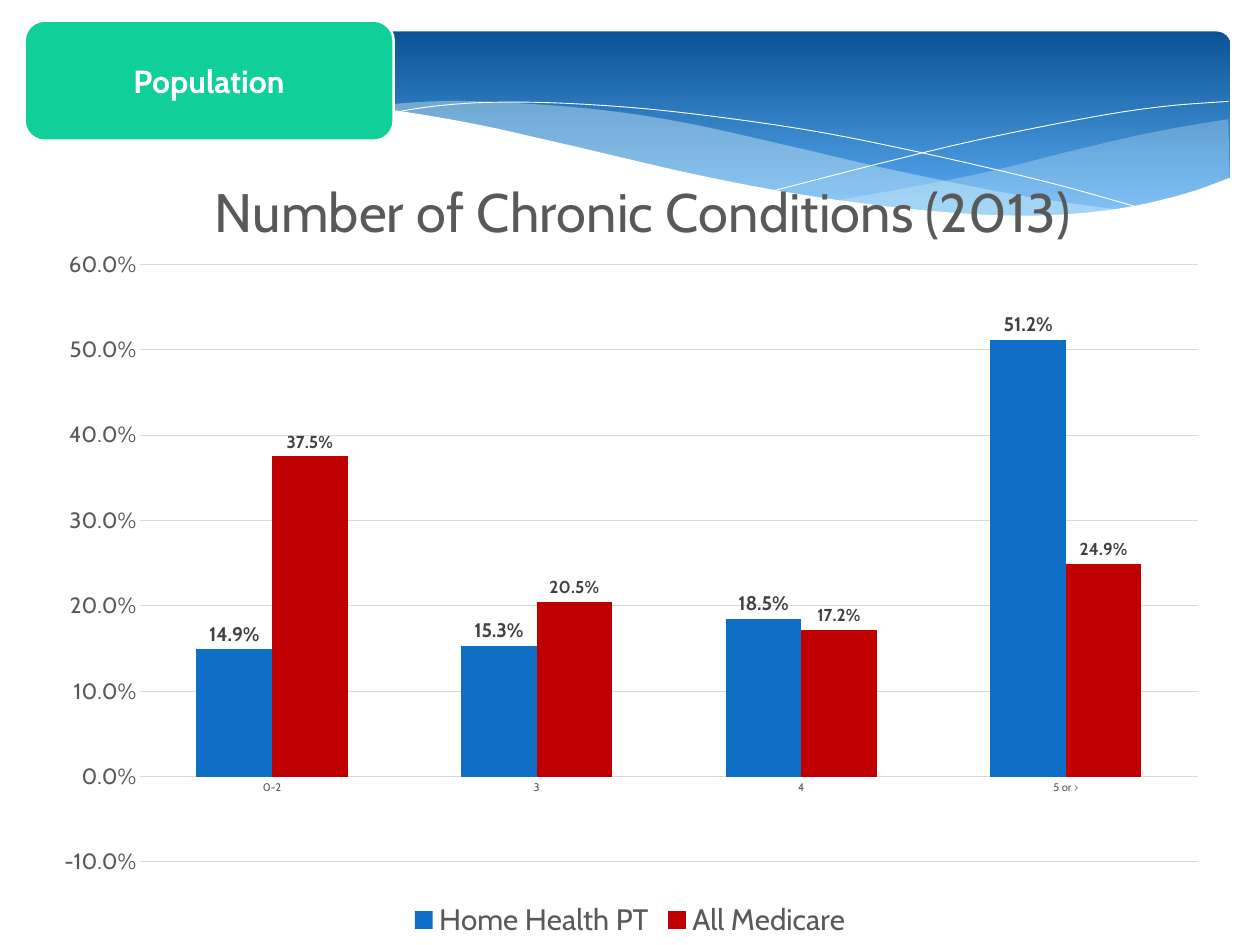
import pptx
import pptx.chart.data
import pptx.dml.color
import pptx.enum.chart
import pptx.enum.shapes
import pptx.enum.text
import pptx.oxml
import pptx.oxml.ns
import pptx.util

COLUMNS, ROWS = 128, 96


def rgb(hex_colour):
    return pptx.dml.color.RGBColor.from_string(hex_colour)


def smooth(knots, steps=5):
    padded = [knots[0], *knots, knots[-1]]
    points = [knots[0]]
    for a, b, c, d in zip(padded, padded[1:], padded[2:], padded[3:]):
        for step in range(1, steps + 1):
            t = step / steps
            points.append(tuple(
                (2 * q + (r - p) * t + (2 * p - 5 * q + 4 * r - s) * t ** 2
                 + (3 * q - p - 3 * r + s) * t ** 3) / 2
                for p, q, r, s in zip(a, b, c, d)))
    return points


class SlideBuilder:
    font = "Cabin"
    ink = "595959"
    rule = "D9D9D9"

    def __init__(self, deck):
        self.slide = deck.slides.add_slide(deck.slide_layouts[6])
        self.column = deck.slide_width / COLUMNS
        self.row = deck.slide_height / ROWS

    def box(self, left, top, width, height):
        return (round(left * self.column), round(top * self.row),
                round(width * self.column), round(height * self.row))

    def style(self, font, size, colour, bold=False):
        font.name, font.size, font.bold = self.font, pptx.util.Pt(size), bold
        font.color.rgb = rgb(colour)

    def panel(self, area, rounding):
        panel = self.slide.shapes.add_shape(
            pptx.enum.shapes.MSO_SHAPE.ROUNDED_RECTANGLE, *self.box(*area))
        panel.adjustments[0] = rounding
        panel.shadow.inherit = False
        return panel

    def banner(self, area, rounding, stops):
        banner = self.panel(area, rounding)
        banner.line.fill.background()
        banner.fill.gradient()
        banner.fill.gradient_angle = 270
        for stop, (position, colour) in zip(banner.fill.gradient_stops, stops):
            stop.position = position
            stop.color.rgb = rgb(colour)

    def tag(self, area, text, fill):
        tag = self.panel(area, 0.167)
        tag.fill.solid()
        tag.fill.fore_color.rgb = rgb(fill)
        tag.line.color.rgb = rgb("FFFFFF")
        tag.line.width = pptx.util.Pt(2)
        frame = tag.text_frame
        frame.text = text
        frame.vertical_anchor = pptx.enum.text.MSO_ANCHOR.MIDDLE
        frame.paragraphs[0].alignment = pptx.enum.text.PP_ALIGN.CENTER
        self.style(frame.paragraphs[0].runs[0].font, 26, "FFFFFF", True)

    def outline(self, points, closed):
        scaled = [(x * self.column, y * self.row) for x, y in points]
        builder = self.slide.shapes.build_freeform(*scaled[0])
        builder.add_line_segments(scaled[1:], close=closed)
        outline = builder.convert_to_shape()
        outline.shadow.inherit = False
        return outline

    def wave(self, points, fill, opacity=100):
        wave = self.outline(points, True)
        wave.line.fill.background()
        wave.fill.solid()
        wave.fill.fore_color.rgb = rgb(fill)
        if opacity < 100:
            colour = wave.fill._xPr.find(".//" + pptx.oxml.ns.qn("a:srgbClr"))
            alpha = colour.makeelement(pptx.oxml.ns.qn("a:alpha"), {"val": str(opacity * 1000)})
            colour.append(alpha)

    def strand(self, knots, colour):
        strand = self.outline(smooth(knots), False)
        strand.fill.background()
        strand.line.color.rgb = rgb(colour)
        strand.line.width = pptx.util.Pt(0)

    def place(self, parent, tag, **shares):
        for old in parent.findall(pptx.oxml.ns.qn("c:layout")):
            parent.remove(old)
        entries = "".join(f'<c:{key} val="{value}"/>' for key, value in shares.items())
        layout = pptx.oxml.parse_xml(
            f'<c:layout {pptx.oxml.ns.nsdecls("c")}><c:manualLayout>{entries}'
            '</c:manualLayout></c:layout>')
        following = parent.find(pptx.oxml.ns.qn(tag))
        following.addprevious(layout)

    def bars(self, area, title, categories, groups):
        data = pptx.chart.data.CategoryChartData(number_format="0.0%")
        data.categories = categories
        for name, values, _, _ in groups:
            data.add_series(name, values)
        chart = self.slide.shapes.add_chart(
            pptx.enum.chart.XL_CHART_TYPE.COLUMN_CLUSTERED, *self.box(*area), data).chart
        self.style(chart.font, 10, "000000")
        chart.has_title = True
        heading = chart.chart_title.text_frame
        heading.text = title
        self.style(heading.paragraphs[0].runs[0].font, 44, self.ink)
        chart.chart_title.include_in_layout = False
        self.place(chart.chart_title._element, "c:overlay",
                   xMode="edge", yMode="edge", x=0.14, y=0.03)
        chart.has_legend = True
        chart.legend.position = pptx.enum.chart.XL_LEGEND_POSITION.BOTTOM
        chart.legend.include_in_layout = False
        self.style(chart.legend.font, 24, self.ink)

        levels = chart.value_axis
        levels.minimum_scale, levels.maximum_scale, levels.major_unit = -0.1, 0.6, 0.1
        levels.tick_labels.number_format = "0.0%"
        levels.tick_labels.number_format_is_linked = False
        levels.format.line.fill.background()
        levels.has_major_gridlines = True
        for line in (levels.major_gridlines.format.line, chart.category_axis.format.line):
            line.color.rgb = rgb(self.rule)
            line.width = pptx.util.Pt(0.75)
        for axis, size in ((levels, 18), (chart.category_axis, 9)):
            axis.major_tick_mark = pptx.enum.chart.XL_TICK_MARK.NONE
            axis.minor_tick_mark = pptx.enum.chart.XL_TICK_MARK.NONE
            self.style(axis.tick_labels.font, size, self.ink)

        plot = chart.plots[0]
        plot.gap_width, plot.overlap, plot.vary_by_categories = 150, 0, False
        self.place(plot._element.getparent(), "c:barChart", layoutTarget="inner",
                   xMode="edge", yMode="edge", x=0.085, y=0.155, w=0.896, h=0.743)
        for series, (_, _, colour, size) in zip(plot.series, groups):
            series.format.fill.solid()
            series.format.fill.fore_color.rgb = rgb(colour)
            labels = series.data_labels
            labels.show_value = True
            labels.number_format = "0.0%"
            labels.number_format_is_linked = False
            labels.position = pptx.enum.chart.XL_LABEL_POSITION.OUTSIDE_END
            self.style(labels.font, size, "404040", True)


def main():
    deck = pptx.Presentation()
    deck.slide_width = pptx.util.Inches(14.22)
    deck.slide_height = pptx.util.Inches(10.67)
    page = SlideBuilder(deck)

    page.banner((3.2, 3.2, 121.8, 20), 0.071, [(0, "0B5394"), (0.9, "59AAF2")])
    right_crest = [(124.8, 12.1), (117.8, 13.3), (110.2, 15), (99.7, 17.6),
                   (90.4, 19.4), (84.7, 20.4)]
    right_trough = [(84.7, 20.4), (92, 21.3), (100, 22), (106.8, 22), (113.9, 21.2),
                    (119.7, 20), (124.9, 18.1)]
    page.wave(smooth(right_crest) + smooth(right_trough), "DBF5F9", 29)
    left_crest = [(114.3, 21.4), (103.3, 19.8), (90.4, 17.2), (80.5, 14.9), (69.2, 12.4),
                  (59.5, 11), (48.6, 10.3), (42, 10.4), (36.6, 11)]
    left_trough = [(36.6, 11), (46.4, 12.4), (57.5, 14.9), (72.5, 18.3), (83.3, 20.3),
                   (92.4, 21.5), (103.3, 22.1), (109.8, 21.9), (114.3, 21.4)]
    page.wave(smooth(left_crest) + smooth(left_trough), "DBF5F9", 40)
    falling = [(39.6, 11.5), (44, 10.8), (49.6, 10.4), (57.6, 10.5), (68.1, 11.3),
               (81.4, 13.1), (93.1, 15.4), (106.4, 18.5), (116.1, 21.2)]
    rising = [(78.5, 19.4), (89, 16.7), (99.4, 14.2), (110.9, 11.9), (118.3, 10.8),
              (124.8, 10.3)]
    for knots in (falling, rising):
        page.strand(knots, "FFFFFF")
    shoreline = [(125.1, 18), (120.3, 19.7), (113.6, 21.2), (105.4, 21.9), (95.3, 21.5),
                 (82.9, 20), (71, 17.8), (57.2, 14.6), (46.7, 12.3), (34.7, 10.5),
                 (24.8, 10), (15.2, 10.4), (7.6, 12), (3, 13.8)]
    page.wave(smooth(shoreline) + [(3, 28.6), (125.1, 28.6)], "FFFFFF")

    page.bars((4, 14.2, 120, 81.7), "Number of Chronic Conditions (2013)",
              ["0-2", "3", "4", "5 or >"],
              [("Home Health PT", (0.149, 0.153, 0.185, 0.512), "0F6FC6", 16),
               ("All Medicare", (0.375, 0.205, 0.172, 0.249), "C00000", 14)])
    page.tag((2.5, 2.1, 37.5, 12.2), "Population", "10CF9B")
    deck.save("out.pptx")


if __name__ == "__main__":
    main()
